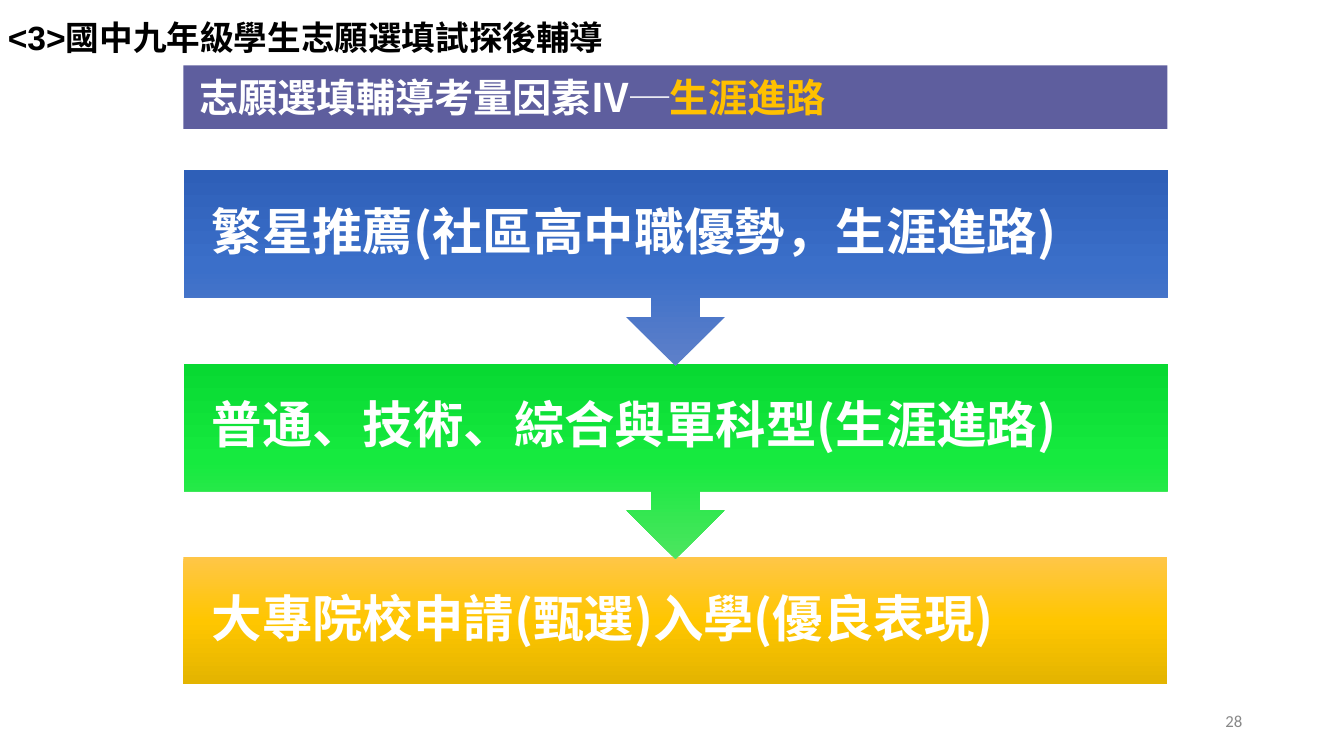
from dataclasses import dataclass

from lxml.etree import SubElement
from pptx import Presentation
from pptx.dml.color import RGBColor
from pptx.enum.shapes import MSO_SHAPE
from pptx.enum.text import MSO_ANCHOR, PP_ALIGN
from pptx.oxml.ns import qn
from pptx.util import Inches, Pt

# Content
TITLE = "<3>國中九年級學生志願選填試探後輔導"
HEADING = ("志願選填輔導考量因素Ⅳ─", "生涯進路")
STEPS = [
    ("繁星推薦(社區高中職優勢，生涯進路)", ("5E80C9", "3B6FC9", "2E5FB8")),
    ("普通、技術、綜合與單科型(生涯進路)", ("4DE560", "16EA3F", "08D932")),
    ("大專院校申請(甄選)入學(優良表現)", ("FFC647", "FFC600", "E3B400")),
]
PAGE_NUMBER = "28"


@dataclass(frozen=True)
class Theme:
    cjk: str = "Noto Sans CJK TC"
    title_font: str = "Arial"
    number_font: str = "Calibri"
    white: str = "FFFFFF"
    black: str = "000000"
    gray: str = "888888"
    accent: str = "FFC000"
    band: str = "000066"
    band_opacity: int = 63
    title_size: int = 24
    heading_size: int = 28
    step_size: int = 36
    number_size: int = 12


THEME = Theme()

# Layout in inches: one column, with steps at an equal pitch
SLIDE_WIDTH, SLIDE_HEIGHT = 13.33, 7.5
COLUMN_LEFT, COLUMN_WIDTH = 1.82, 9.76
STEP_TOP, STEP_PITCH = 1.69, 1.92
BOX_HEIGHT, CALLOUT_HEIGHT = 1.26, 1.94
CALLOUT_ADJUSTMENTS = (0.25, 0.25, 0.25, 0.65)


def add_text(slide, box, runs, size, font, bold=True, margins=(0.1, 0.05),
             anchor=MSO_ANCHOR.TOP, align=PP_ALIGN.LEFT, spacing=None, hanging=0):
    """Add a text box holding one paragraph of (text, colour) runs."""
    shape = slide.shapes.add_textbox(*map(Inches, box))
    frame = shape.text_frame
    frame.word_wrap = True
    frame.vertical_anchor = anchor
    frame.margin_left = frame.margin_right = Inches(margins[0])
    frame.margin_top = frame.margin_bottom = Inches(margins[1])
    paragraph = frame.paragraphs[0]
    paragraph.alignment = align
    if spacing:
        paragraph.line_spacing = spacing
    if hanging:
        properties = paragraph._p.get_or_add_pPr()
        properties.set("marL", str(Inches(hanging)))
        properties.set("indent", str(-Inches(hanging)))
    for text, color in runs:
        run = paragraph.add_run()
        run.text = text
        run.font.size = Pt(size)
        run.font.bold = bold
        run.font.name = font
        run.font.color.rgb = RGBColor.from_string(color)
        SubElement(run._r.get_or_add_rPr(), qn("a:ea"), typeface=THEME.cjk)


def add_block(slide, kind, box):
    shape = slide.shapes.add_shape(kind, *map(Inches, box))
    shape.shadow.inherit = False
    shape.line.fill.background()
    return shape


def fill_gradient(shape, colors):
    """Spread the colours evenly from top to bottom of the unrotated shape."""
    shape.fill.gradient()
    gradient = shape._element.spPr.find(qn("a:gradFill"))
    for child in list(gradient):
        gradient.remove(child)
    gradient.set("rotWithShape", "1")
    stops = SubElement(gradient, qn("a:gsLst"))
    for index, color in enumerate(colors):
        position = index * 100000 // (len(colors) - 1)
        stop = SubElement(stops, qn("a:gs"), pos=str(position))
        SubElement(stop, qn("a:srgbClr"), val=color)
    SubElement(gradient, qn("a:lin"), ang="5400000", scaled="0")


def add_heading(slide):
    band = add_block(slide, MSO_SHAPE.RECTANGLE, (COLUMN_LEFT, 0.65, COLUMN_WIDTH, 0.63))
    band.fill.solid()
    band.fill.fore_color.rgb = RGBColor.from_string(THEME.band)
    color = band._element.spPr.find(qn("a:solidFill"))[0]
    SubElement(color, qn("a:alpha"), val=str(THEME.band_opacity * 1000))
    add_text(slide, (1.88, 0.68, 9.77, 0.57), zip(HEADING, (THEME.white, THEME.accent)),
             THEME.heading_size, THEME.cjk, hanging=0.18)


def add_step(slide, index, text, colors):
    top = STEP_TOP + index * STEP_PITCH
    is_last = index == len(STEPS) - 1
    kind = MSO_SHAPE.RECTANGLE if is_last else MSO_SHAPE.UP_ARROW_CALLOUT
    height = BOX_HEIGHT if is_last else CALLOUT_HEIGHT
    block = add_block(slide, kind, (COLUMN_LEFT, top, COLUMN_WIDTH, height))
    if not is_last:
        block.rotation = 180
        for position, value in enumerate(CALLOUT_ADJUSTMENTS):
            block.adjustments[position] = value
    fill_gradient(block, colors)
    add_text(slide, (COLUMN_LEFT, top, COLUMN_WIDTH, BOX_HEIGHT), [(text, THEME.white)],
             THEME.step_size, THEME.cjk, margins=(0.28, 0.28),
             anchor=MSO_ANCHOR.MIDDLE, spacing=0.9)


def main():
    presentation = Presentation()
    presentation.slide_width = Inches(SLIDE_WIDTH)
    presentation.slide_height = Inches(SLIDE_HEIGHT)
    slide = presentation.slides.add_slide(presentation.slide_layouts[6])

    add_heading(slide)
    # Later steps lie behind, so each arrow tip covers the next box
    for index, (text, colors) in reversed(list(enumerate(STEPS))):
        add_step(slide, index, text, colors)

    # Title and page number
    add_text(slide, (-0.02, 0.12, 6.67, 0.5), [(TITLE, THEME.black)],
             THEME.title_size, THEME.title_font)
    add_text(slide, (9.42, 6.95, 3, 0.4), [(PAGE_NUMBER, THEME.gray)],
             THEME.number_size, THEME.number_font, bold=False,
             anchor=MSO_ANCHOR.MIDDLE, align=PP_ALIGN.RIGHT)

    presentation.save("out.pptx")


if __name__ == "__main__":
    main()
